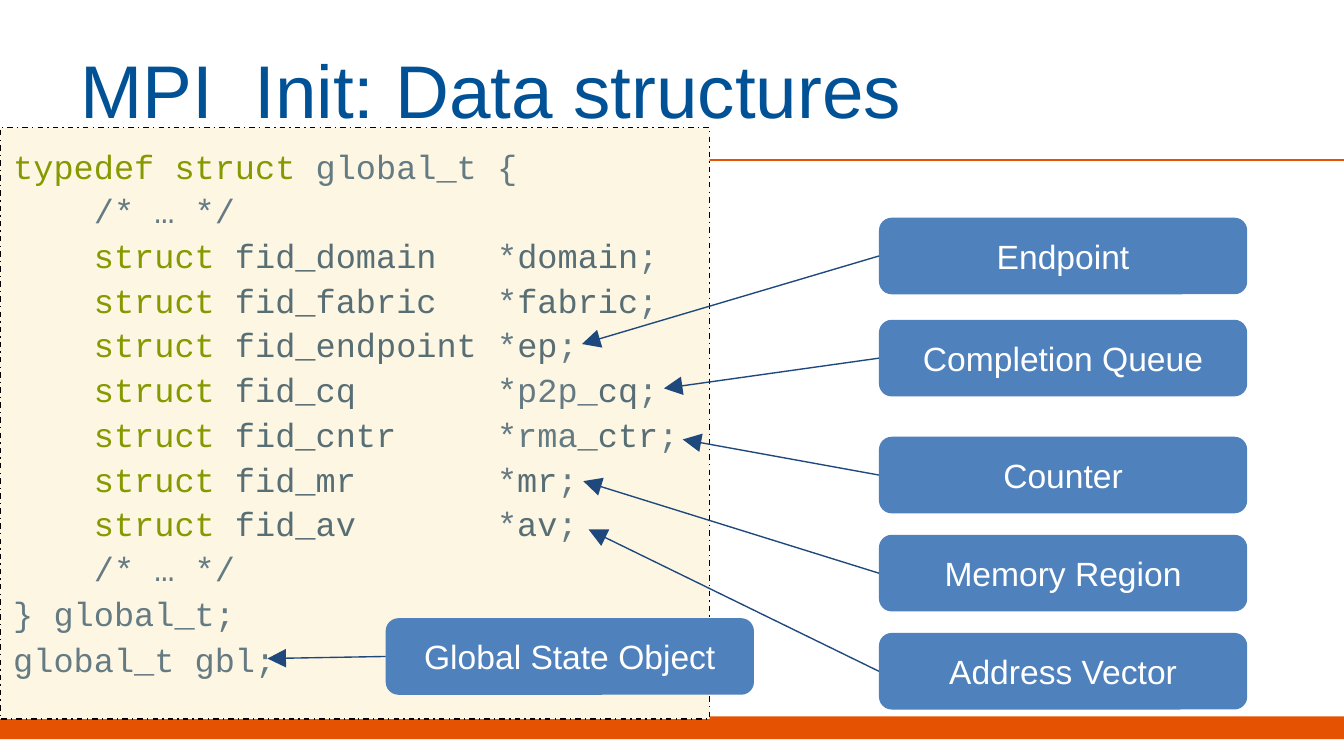
from lxml import etree
from pptx import Presentation
from pptx import util as u
from pptx.dml.color import RGBColor
from pptx.enum import dml, shapes, text
from pptx.oxml.ns import qn

ORANGE = RGBColor(0xE5, 0x53, 0x02)
TITLE = RGBColor(0x00, 0x51, 0x95)
CREAM = RGBColor(0xFD, 0xF6, 0xE3)
BLACK = RGBColor(0x00, 0x00, 0x00)
WHITE = RGBColor(0xFF, 0xFF, 0xFF)
BLUE = RGBColor(0x4F, 0x81, 0xBD)
NAVY = RGBColor(0x1F, 0x49, 0x7D)
KEYWORD = RGBColor(0x85, 0x99, 0x00)
PLAIN = RGBColor(0x65, 0x7B, 0x83)
NAME = RGBColor(0x58, 0x6E, 0x75)

prs = Presentation()
prs.slide_width = u.Inches(10)
prs.slide_height = prs.slide_width * 9 // 16
s = prs.slides.add_slide(prs.slide_layouts[6])


def add_box(kind, x, y, w, h, fill):
    sp = s.shapes.add_shape(kind, *map(u.Inches, (x, y, w, h)))
    sp.shadow.inherit = False
    sp.fill.solid()
    sp.fill.fore_color.rgb = fill
    sp.line.fill.background()
    tf = sp.text_frame
    tf.word_wrap = True
    tf.margin_left = tf.margin_right = tf.margin_top = tf.margin_bottom = u.Inches(0.1)
    return sp


def add_line(x1, y1, x2, y2, color, width):
    ln = s.shapes.add_connector(shapes.MSO_CONNECTOR.STRAIGHT, *map(u.Inches, (x1, y1, x2, y2)))
    ln.line.color.rgb = color
    ln.line.width = u.Pt(width)
    etree.SubElement(ln._element.spPr, qn("a:effectLst"))
    return ln


add_box(shapes.MSO_SHAPE.RECTANGLE, 0, 5.33, 10, 0.17, ORANGE)
add_line(0, 1.19, 10, 1.19, ORANGE, 1)

sp = s.shapes.add_textbox(u.Inches(0.5), u.Inches(0.19), u.Inches(8.17), u.Inches(0.94))
tf = sp.text_frame
tf.word_wrap = True
tf.vertical_anchor = text.MSO_ANCHOR.MIDDLE
tf.margin_left = tf.margin_right = tf.margin_top = tf.margin_bottom = u.Inches(0.1)
p = tf.paragraphs[0]
p.text = "MPI_Init: Data structures"
p.font.name, p.font.size = "Arial", u.Pt(40)
p.font.color.rgb = TITLE

fields = [
    ("fid_domain", "", "domain"),
    ("fid_fabric", "", "fabric"),
    ("fid_endpoint", "", "ep"),
    ("fid_cq", "p2p_", "cq"),
    ("fid_cntr", "rma_", "ctr"),
    ("fid_mr", "", "mr"),
    ("fid_av", "", "av"),
]
members = []
for kind, prefix, name in fields:
    gap = " " * (13 - len(kind))
    members.append([("    ", PLAIN), ("struct ", KEYWORD), (kind, NAME),
                    (gap + "*" + prefix, PLAIN), (name, NAME), (";", PLAIN)])
opening = [("typedef", KEYWORD), (" ", PLAIN), ("struct", KEYWORD), (" global_t {", PLAIN)]
comment = [("    /* … */", PLAIN)]
code = [
    (1.11, [opening, comment]),
    (1.11, members),
    (1.11, [comment]),
    (1.11, [[("} global_t;", PLAIN)]]),
    (1.15, [[("global_t gbl;", PLAIN)]]),
]

sp = add_box(shapes.MSO_SHAPE.RECTANGLE, 0, 0.95, 5.28, 4.4, CREAM)
sp.line.color.rgb = BLACK
sp.line.width = u.Pt(0.75)
sp.line.dash_style = dml.MSO_LINE.DASH_DOT
tf = sp.text_frame
tf.vertical_anchor = text.MSO_ANCHOR.TOP
for i, (spacing, lines) in enumerate(code):
    p = tf.add_paragraph() if i else tf.paragraphs[0]
    p.alignment = text.PP_ALIGN.LEFT
    p.line_spacing = spacing
    p.font.name, p.font.size = "Courier New", u.Pt(18)
    for j, runs in enumerate(lines):
        if j:
            p.add_line_break()
        for words, color in runs:
            r = p.add_run()
            r.text = words
            r.font.color.rgb = color

labels = [
    ("Global State Object", 2.87, 4.6, 1.99, 4.9),
    ("Endpoint", 6.54, 1.62, 4.33, 2.56),
    ("Completion Queue", 6.54, 2.38, 4.94, 2.89),
    ("Counter", 6.54, 3.25, 5.08, 3.27),
    ("Memory Region", 6.54, 3.98, 4.34, 3.58),
    ("Address Vector", 6.54, 4.71, 4.38, 3.94),
]
for label, x, y, to_x, to_y in labels:
    sp = add_box(shapes.MSO_SHAPE.ROUNDED_RECTANGLE, x, y, 2.74, 0.57, BLUE)
    tf = sp.text_frame
    tf.vertical_anchor = text.MSO_ANCHOR.MIDDLE
    p = tf.paragraphs[0]
    p.text = label
    p.alignment = text.PP_ALIGN.CENTER
    p.font.name, p.font.size = "Arial", u.Pt(18)
    p.font.color.rgb = WHITE
    ln = add_line(x, y + 0.29, to_x, to_y, NAVY, 0.75)
    ln.begin_connect(sp, 1)
    etree.SubElement(ln.line._get_or_add_ln(), qn("a:tailEnd"), type="triangle", w="lg", len="lg")

prs.save("out.pptx")
